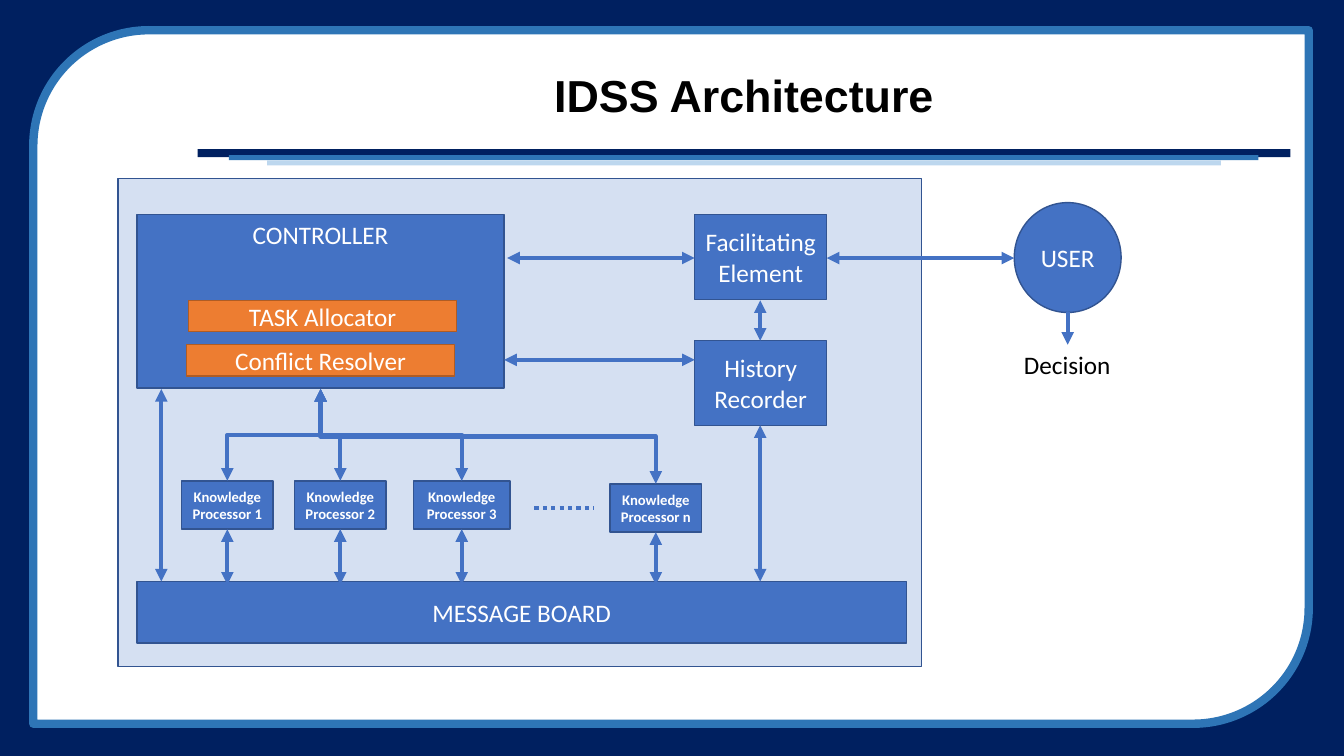
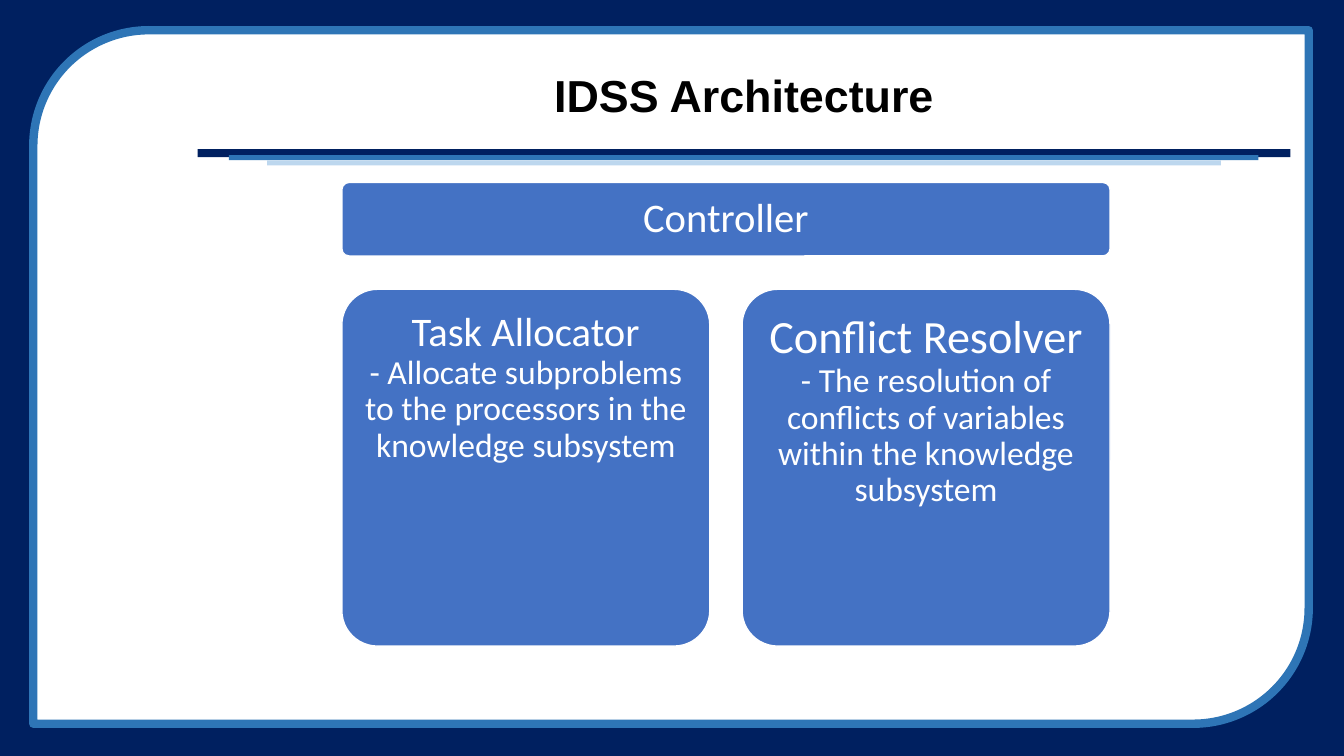
from dataclasses import dataclass

from lxml.etree import SubElement
from pptx import Presentation
from pptx.dml.color import RGBColor
from pptx.enum.dml import MSO_LINE
from pptx.enum.shapes import MSO_CONNECTOR, MSO_SHAPE
from pptx.enum.text import MSO_ANCHOR, PP_ALIGN
from pptx.oxml.ns import qn
from pptx.util import Inches, Pt


@dataclass(frozen=True)
class Theme:
    navy: str = "002060"
    frame: str = "2E75B6"
    pale: str = "BDD7EE"
    blue: str = "4472C4"
    blue_edge: str = "325491"
    orange: str = "ED7D31"
    orange_edge: str = "AF5C24"
    white: str = "FFFFFF"
    black: str = "000000"
    title_font: str = "Arial"
    body_font: str = "Calibri"
    title_size: float = 32
    card_size: float = 29
    wide_card_size: float = 33
    detail_size: float = 24
    label_size: float = 18
    processor_size: float = 10.5


THEME = Theme()
SLIDE_WIDTH, SLIDE_HEIGHT = 13.33, 7.5
TITLE = "IDSS Architecture"
TITLE_BOX = (1.96, 0.49, 10.84, 0.97)
FRAME_BOX = (0.33, 0.3, 12.65, 6.88)
TITLE_RULES = [
    ((1.96, 1.48, 10.84, 0.08), THEME.navy),
    ((2.27, 1.54, 10.21, 0.05), THEME.frame),
    ((2.65, 1.59, 9.46, 0.05), THEME.pale),
]

SYSTEM_BOX = (1.17, 1.77, 7.97, 4.84)
CONTROLLER_BOX = (1.36, 2.13, 3.64, 1.72)
BLUE_BOXES = [
    ("MESSAGE BOARD", (1.36, 5.77, 7.63, 0.61), MSO_SHAPE.RECTANGLE),
    ("Facilitating\nElement", (6.89, 2.13, 1.31, 0.84), MSO_SHAPE.RECTANGLE),
    ("History\nRecorder", (6.89, 3.38, 1.31, 0.84), MSO_SHAPE.RECTANGLE),
    ("USER", (10.06, 2.01, 1.06, 1.09), MSO_SHAPE.OVAL),
]
ORANGE_BOXES = [
    ("TASK Allocator", (1.87, 2.98, 2.66, 0.31)),
    ("Conflict Resolver", (1.85, 3.42, 2.66, 0.31)),
]
PROCESSORS = [
    ("Knowledge Processor 1", (1.8, 4.77, 0.91, 0.48)),
    ("Knowledge Processor 2", (2.92, 4.77, 0.91, 0.48)),
    ("Knowledge Processor 3", (4.1, 4.77, 0.96, 0.48)),
    ("Knowledge Processor n", (6.05, 4.8, 0.91, 0.48)),
]
DOUBLE_ARROWS = [
    ((1.6, 3.86), (1.6, 5.77)),
    ((7.54, 4.22), (7.54, 5.77)),
    ((7.54, 2.98), (7.54, 3.38)),
    ((6.89, 2.56), (5.03, 2.56)),
    ((6.89, 3.57), (5, 3.57)),
    ((10.06, 2.56), (8.2, 2.56)),
]
BRANCH_START = (3.18, 3.86)
PROCESSOR_ARROW_END = 5.8
DECISION_ARROW = ((10.59, 3.1), (10.59, 3.42))
DECISION_BOX = (9.97, 3.42, 1.23, 0.4)
ELLIPSIS_LINE = ((5.3, 5.04), (5.89, 5.04))

CARD_LEFT, CARD_WIDTH, CARD_GAP = 3.39, 3.65, 0.32
HEADER_TOP, HEADER_HEIGHT = 1.81, 0.73
CARD_TOP, CARD_HEIGHT = 2.87, 3.54
CARDS = [
    ("Task Allocator", THEME.card_size, 0.12,
     "- Allocate subproblems to the processors in the knowledge subsystem"),
    ("Conflict Resolver", THEME.wide_card_size, 0.14,
     "- The resolution of conflicts of variables within the knowledge subsystem"),
]


def rgb(color):
    return RGBColor.from_string(color)


def write(shape, runs, color=THEME.white, font=THEME.body_font, bold=False,
          anchor=MSO_ANCHOR.MIDDLE, spacing=None, inset=None):
    frame = shape.text_frame
    frame.word_wrap = True
    frame.vertical_anchor = anchor
    if inset is not None:
        frame.margin_left = frame.margin_right = Inches(inset)
        frame.margin_top = frame.margin_bottom = Inches(inset)
    paragraph = frame.paragraphs[0]
    paragraph.alignment = PP_ALIGN.CENTER
    if spacing:
        paragraph.line_spacing = spacing
    lines = [(line, size) for text, size in runs for line in text.split("\n")]
    for index, (line, size) in enumerate(lines):
        if index:
            paragraph.add_line_break()
        run = paragraph.add_run()
        run.text = line
        run.font.size = Pt(size)
        run.font.name = font
        run.font.bold = bold
        run.font.color.rgb = rgb(color)


def add_box(slide, box, fill, edge=None, kind=MSO_SHAPE.RECTANGLE, edge_width=1):
    shape = slide.shapes.add_shape(kind, *map(Inches, box))
    shape.shadow.inherit = False
    shape.fill.solid()
    shape.fill.fore_color.rgb = rgb(fill)
    if edge:
        shape.line.color.rgb = rgb(edge)
        shape.line.width = Pt(edge_width)
    else:
        shape.line.fill.background()
    return shape


def add_text_box(slide, box, runs, **style):
    shape = slide.shapes.add_textbox(*map(Inches, box))
    write(shape, runs, **style)


def add_line(slide, start, end, ends=("headEnd", "tailEnd"), kind=MSO_CONNECTOR.STRAIGHT):
    connector = slide.shapes.add_connector(kind, *map(Inches, (*start, *end)))
    connector.line.color.rgb = rgb(THEME.blue)
    connector.line.width = Pt(3)
    line = connector.line._get_or_add_ln()
    for name in ends:
        SubElement(line, qn(f"a:{name}"), type="triangle")
    SubElement(connector.element.spPr, qn("a:effectLst"))
    return connector


def add_branch(slide, start, end):
    span, drop = abs(end[0] - start[0]), end[1] - start[1]
    center_x, center_y = (start[0] + end[0]) / 2, (start[1] + end[1]) / 2
    corner = (center_x - drop / 2, center_y - span / 2)
    opposite = (center_x + drop / 2, center_y + span / 2)
    connector = add_line(slide, corner, opposite, kind=MSO_CONNECTOR.ELBOW)
    transform = connector.element.spPr.find(qn("a:xfrm"))
    if end[0] > start[0]:
        transform.set("rot", str(270 * 60000))
        transform.set("flipH", "1")
    else:
        transform.set("rot", str(90 * 60000))


def add_base_slide(presentation):
    slide = presentation.slides.add_slide(presentation.slide_layouts[6])
    add_box(slide, (0, 0, SLIDE_WIDTH, SLIDE_HEIGHT), THEME.navy)
    add_box(slide, FRAME_BOX, THEME.white, THEME.frame,
            MSO_SHAPE.ROUND_2_DIAG_RECTANGLE, 6)
    for box, color in TITLE_RULES:
        add_box(slide, box, color)
    add_text_box(slide, TITLE_BOX, [(TITLE, THEME.title_size)], color=THEME.black,
                 font=THEME.title_font, bold=True, spacing=0.9)
    return slide


def build_diagram(slide):
    system = add_box(slide, SYSTEM_BOX, THEME.blue, THEME.blue_edge)
    color = system.element.spPr.find(qn("a:solidFill")).find(qn("a:srgbClr"))
    SubElement(color, qn("a:alpha"), val="22000")

    controller = add_box(slide, CONTROLLER_BOX, THEME.blue, THEME.blue_edge)
    write(controller, [("CONTROLLER", THEME.label_size)], anchor=MSO_ANCHOR.TOP)
    for text, box, kind in BLUE_BOXES:
        write(add_box(slide, box, THEME.blue, THEME.blue_edge, kind),
              [(text, THEME.label_size)])
    for text, box in ORANGE_BOXES:
        write(add_box(slide, box, THEME.orange, THEME.orange_edge),
              [(text, THEME.label_size)])
    for text, box in PROCESSORS:
        write(add_box(slide, box, THEME.blue, THEME.blue_edge),
              [(text, THEME.processor_size)], bold=True)
        left, top, width, height = box
        center = left + width / 2
        add_line(slide, (center, top + height), (center, PROCESSOR_ARROW_END))
        add_branch(slide, BRANCH_START, (center, top))

    for start, end in DOUBLE_ARROWS:
        add_line(slide, start, end)
    add_line(slide, *DECISION_ARROW, ends=("tailEnd",))
    add_text_box(slide, DECISION_BOX, [("Decision", THEME.label_size)],
                 color=THEME.black, anchor=MSO_ANCHOR.TOP)
    ellipsis = add_line(slide, *ELLIPSIS_LINE, ends=())
    ellipsis.line.dash_style = MSO_LINE.ROUND_DOT


def add_card(slide, box, runs, **style):
    shape = add_box(slide, box, THEME.blue, THEME.white, MSO_SHAPE.ROUNDED_RECTANGLE)
    shape.adjustments[0] = 0.1
    write(shape, runs, spacing=0.9, **style)


def build_cards(slide):
    header_width = len(CARDS) * CARD_WIDTH + (len(CARDS) - 1) * CARD_GAP
    add_card(slide, (CARD_LEFT, HEADER_TOP, header_width, HEADER_HEIGHT),
             [("Controller", THEME.card_size)], inset=0.12)
    for index, (heading, size, inset, detail) in enumerate(CARDS):
        left = CARD_LEFT + index * (CARD_WIDTH + CARD_GAP)
        add_card(slide, (left, CARD_TOP, CARD_WIDTH, CARD_HEIGHT),
                 [(heading, size), (detail, THEME.detail_size)],
                 anchor=MSO_ANCHOR.TOP, inset=inset)


def main():
    presentation = Presentation()
    presentation.slide_width = Inches(SLIDE_WIDTH)
    presentation.slide_height = Inches(SLIDE_HEIGHT)
    for build in (build_diagram, build_cards):
        build(add_base_slide(presentation))
    presentation.save("out.pptx")


if __name__ == "__main__":
    main()
